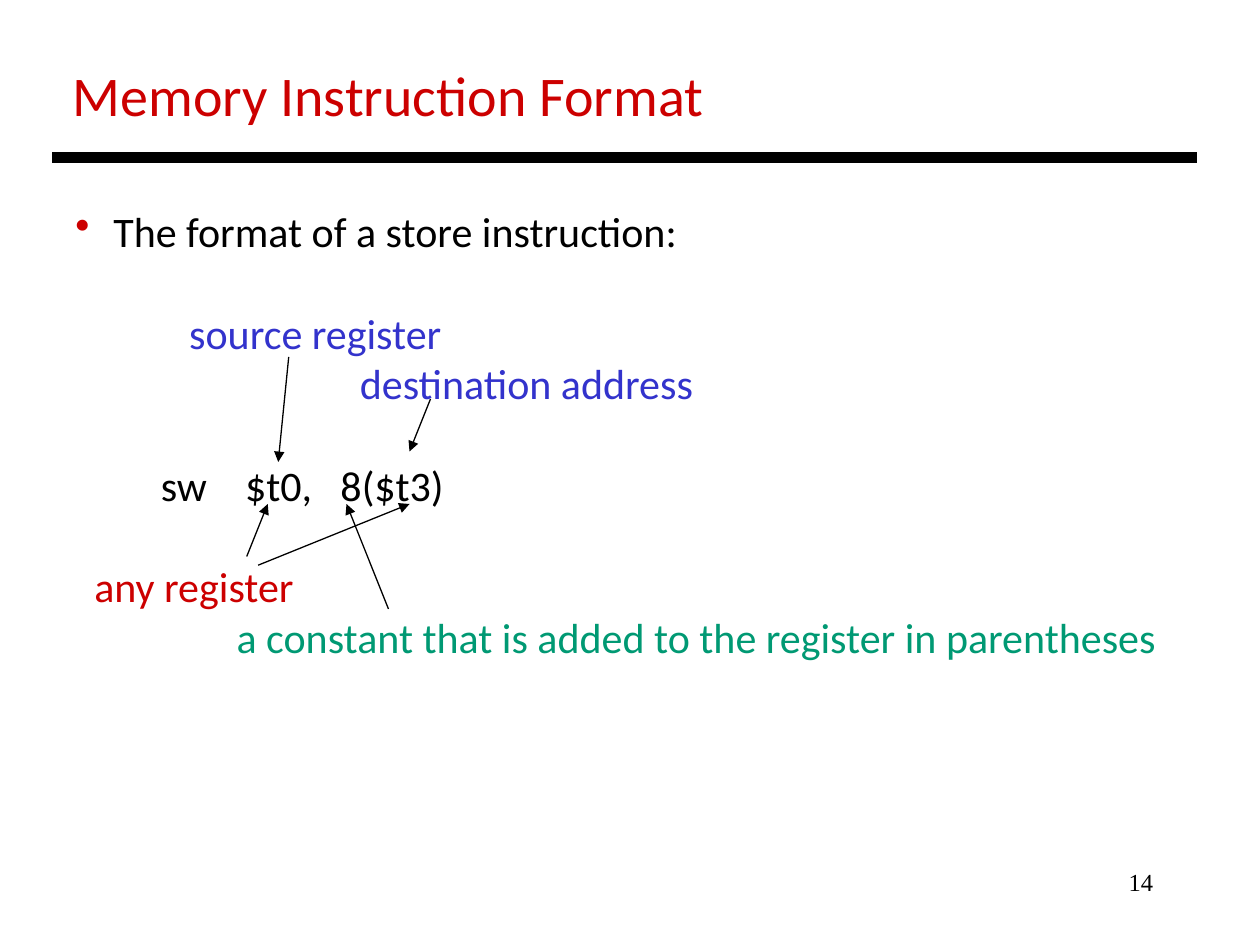
from lxml import etree
from pptx import Presentation
from pptx import util as u
from pptx.dml.color import RGBColor
from pptx.enum import shapes, text
from pptx.oxml.ns import qn

COLORS = {
    "black": "000000",
    "red": "CC0000",
    "blue": "3333CC",
    "green": "009973",
}
BODY_SIZE = 24
LINE_HEIGHT = 29.3
SPACE_WIDTH = 5.42

BODY_LINES = [
    ("The format of a store instruction:", "black", 4, 0),
    ("source register", "blue", 12, 1),
    ("destination address", "blue", 30, 0),
    ("\tsw\t$t0,\t8($t3)", "black", 0, 1),
    ("any register", "red", 2, 1),
    ("a constant that is added to the register in parentheses", "green", 17, 0),
]
INSTRUCTION_TABS = [48.8, 97, 151.5]

ARROWS = [
    ((165, 204), (159, 264)),
    ((246, 228), (234, 258)),
    ((141, 318), (153, 288)),
    ((147.5, 323), (234, 288)),
    ((222, 348), (198, 288)),
]


def color(name):
    return RGBColor.from_string(COLORS[name])


def format_runs(paragraph, size, color_name, font="Calibri"):
    for run in paragraph.runs:
        run.font.name = font
        run.font.size = u.Pt(size)
        run.font.color.rgb = color(color_name)


def add_text_box(slide, left, top, width, height):
    shape = slide.shapes.add_textbox(u.Pt(left), u.Pt(top), u.Pt(width), u.Pt(height))
    shape.text_frame.word_wrap = True
    return shape.text_frame


def add_label(slide, box, label, size, color_name, font="Calibri",
              alignment=text.PP_ALIGN.LEFT):
    frame = add_text_box(slide, *box)
    frame.text = label
    paragraph = frame.paragraphs[0]
    paragraph.alignment = alignment
    format_runs(paragraph, size, color_name, font)


def set_indent(paragraph, spaces):
    margin = u.Pt(round(spaces * SPACE_WIDTH, 2))
    paragraph._p.get_or_add_pPr().set("marL", str(margin))
    return margin


def add_bullet(paragraph, margin):
    properties = paragraph._p.get_or_add_pPr()
    properties.set("indent", str(-margin))
    bullet_color = etree.SubElement(properties, qn("a:buClr"))
    etree.SubElement(bullet_color, qn("a:srgbClr"), val=COLORS["red"])
    etree.SubElement(properties, qn("a:buChar"), char="•")


def add_tabs(paragraph, positions):
    tabs = etree.SubElement(paragraph._p.get_or_add_pPr(), qn("a:tabLst"))
    for position in positions:
        etree.SubElement(tabs, qn("a:tab"), pos=str(u.Pt(position)), algn="l")


def add_body(slide):
    frame = add_text_box(slide, 36, 113.8, 642, 270)
    for index, (line, color_name, spaces, skipped) in enumerate(BODY_LINES):
        paragraph = frame.add_paragraph() if index else frame.paragraphs[0]
        paragraph.text = line
        paragraph.space_before = u.Pt(skipped * LINE_HEIGHT)
        margin = set_indent(paragraph, spaces)
        if index == 0:
            add_bullet(paragraph, margin)
        if "\t" in line:
            add_tabs(paragraph, INSTRUCTION_TABS)
        format_runs(paragraph, BODY_SIZE, color_name)


def add_line(slide, start, end, width, arrow=False):
    points = [u.Pt(value) for value in (*start, *end)]
    connector = slide.shapes.add_connector(shapes.MSO_CONNECTOR.STRAIGHT, *points)
    connector.line.color.rgb = color("black")
    connector.line.width = u.Pt(width)
    if arrow:
        etree.SubElement(connector.line._get_or_add_ln(), qn("a:tailEnd"), type="triangle")
    etree.SubElement(connector._element.spPr, qn("a:effectLst"))


def main():
    presentation = Presentation()
    presentation.slide_width = u.Pt(720)
    presentation.slide_height = u.Pt(540)
    slide = presentation.slides.add_slide(presentation.slide_layouts[6])

    add_label(slide, (516, 492, 150, 36), "14", 14, "black",
              "Times New Roman", text.PP_ALIGN.RIGHT)
    add_label(slide, (34.5, 31, 400, 46), "Memory Instruction Format", 32, "red")
    add_line(slide, (30, 90), (684, 90), 6)
    add_body(slide)
    for start, end in ARROWS:
        add_line(slide, start, end, 0.75, arrow=True)

    presentation.save("out.pptx")


if __name__ == "__main__":
    main()
